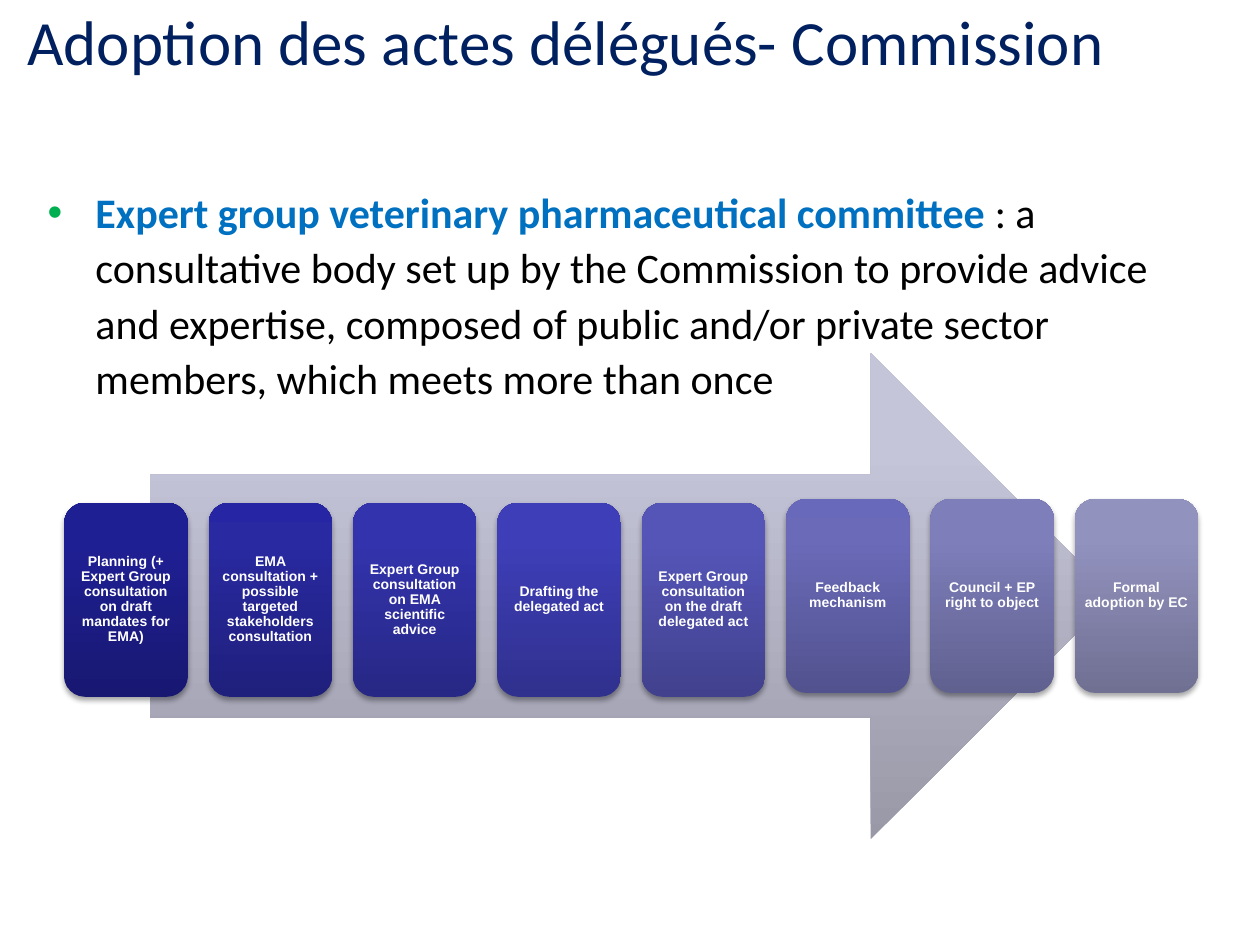
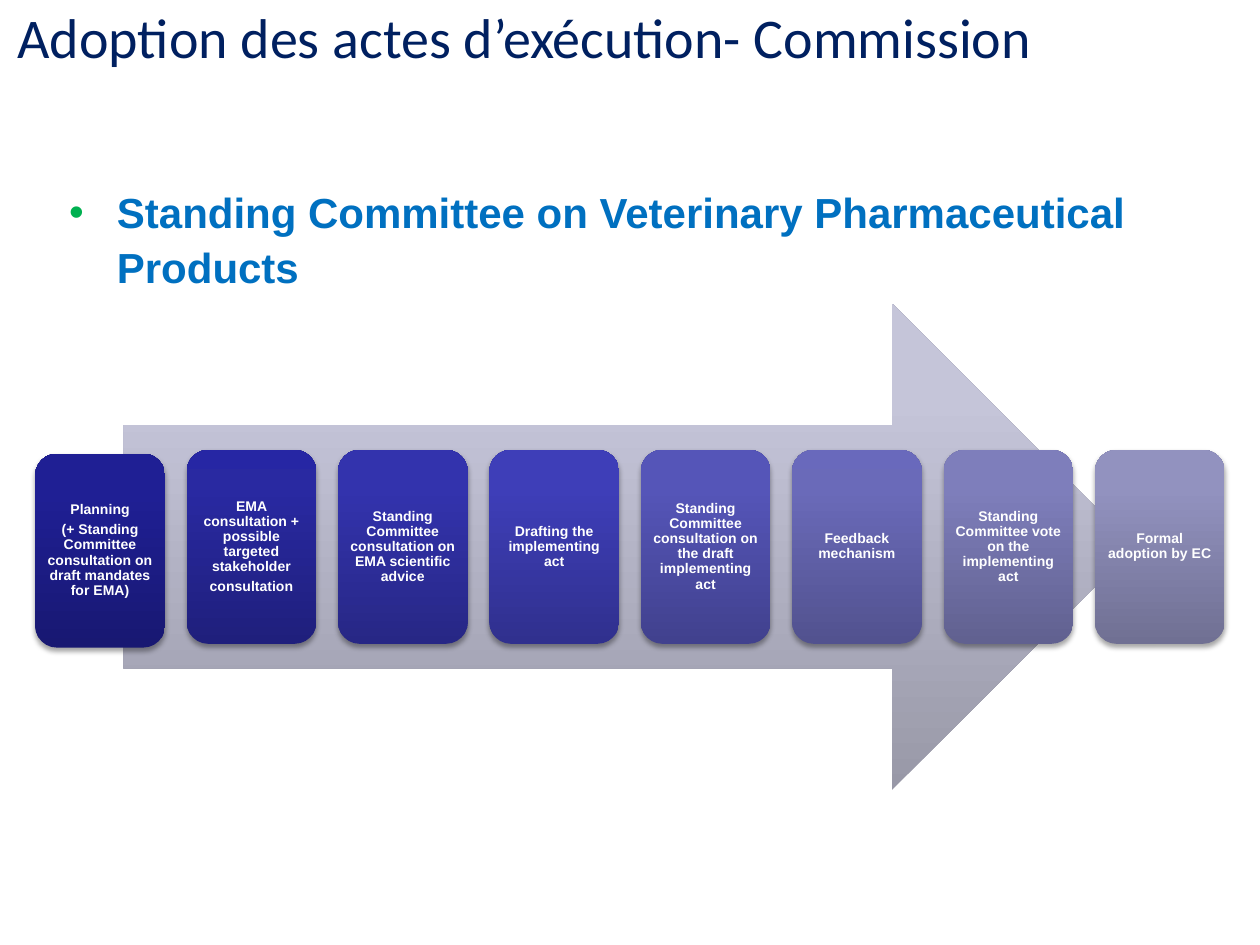
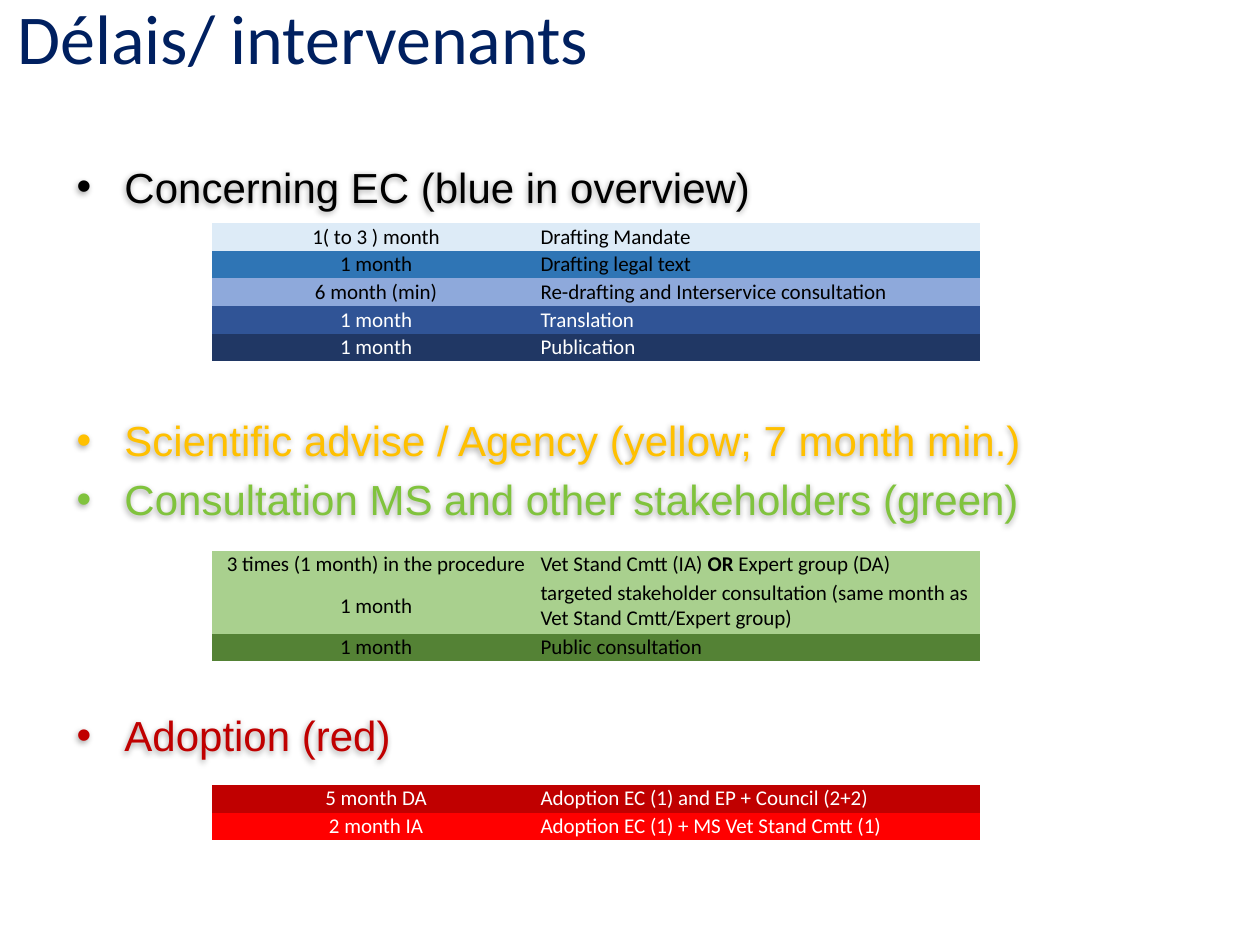
import copy
from dataclasses import dataclass

import pptx
import pptx.util
from pptx.dml.color import RGBColor
from pptx.enum.shapes import MSO_SHAPE
from pptx.enum.text import MSO_ANCHOR, PP_ALIGN
from pptx.oxml import parse_xml
from pptx.oxml.ns import nsdecls, qn
from pptx.util import Inches


# Colours, fonts and type sizes shared by the slides
@dataclass(frozen=True)
class Theme:
    heading_font: str = "Calibri"
    label_font: str = "Arial"
    title: str = "002060"
    highlight: str = "0070C0"
    bullet: str = "00B050"
    black: str = "000000"
    white: str = "FFFFFF"
    body_size: int = 24
    step_size: int = 8
    table_size: int = 12
    stops: tuple = (0, 0.8, 1)
    arrow: tuple = ("9898A7", "C5C5D9", "C6C6DA")
    steps: tuple = (
        ("181872", "1F1F94", "1D1D97"),
        ("1F1F7C", "2929A1", "2626A4"),
        ("272785", "3333AD", "3131B0"),
        ("30308E", "3E3EB8", "3C3CBB"),
        ("41418E", "5555B8", "5353BB"),
        ("52528F", "6A6AB9", "6969BC"),
        ("616190", "7E7EBB", "7E7EBD"),
        ("707093", "9292BF", "9191C0"),
    )


class Deck:
    NO_TABLE_STYLE = "{2D5ABB26-0587-4C30-8999-92F81FD0307C}"

    def __init__(self, theme):
        self.theme = theme
        self.presentation = pptx.Presentation()
        self.presentation.slide_width = Inches(10)
        self.presentation.slide_height = Inches(7.5)
        self.slide = None

    # Shared formatting
    def add_text(self, paragraph, text, font, size, colour, bold=False):
        run = paragraph.add_run()
        run.text = text
        run.font.name = font
        run.font.size = pptx.util.Pt(size)
        run.font.bold = bold
        run.font.color.rgb = RGBColor.from_string(colour)

    def add_shadow(self, shape):
        shape.shadow.inherit = False
        effects = shape._element.spPr.find(qn("a:effectLst"))
        effects.append(parse_xml(
            f'<a:outerShdw {nsdecls("a")} blurRad="{pptx.util.Pt(3.1)}" '
            f'dist="{pptx.util.Pt(1.8)}" dir="5400000" rotWithShape="0">'
            f'<a:srgbClr val="{self.theme.black}"><a:alpha val="35000"/></a:srgbClr>'
            "</a:outerShdw>"))

    def add_bullet(self, paragraph, colour):
        properties = paragraph._p.get_or_add_pPr()
        properties.set("marL", str(Inches(0.38)))
        properties.set("indent", str(-Inches(0.38)))
        for element in (f'<a:buClr {nsdecls("a")}><a:srgbClr val="{colour}"/></a:buClr>',
                        f'<a:buFont {nsdecls("a")} typeface="{self.theme.label_font}"/>',
                        f'<a:buChar {nsdecls("a")} char="•"/>'):
            properties.append(parse_xml(element))

    # Slide elements
    def new_slide(self, title, left, top, size):
        self.slide = self.presentation.slides.add_slide(self.presentation.slide_layouts[6])
        frame = self.text_box(left, top, 9, 1.02).text_frame
        self.add_text(frame.paragraphs[0], title, self.theme.heading_font, size,
                      self.theme.title)

    def text_box(self, left, top, width, height):
        box = self.slide.shapes.add_textbox(
            Inches(left), Inches(top), Inches(width), Inches(height))
        box.text_frame.word_wrap = True
        return box

    def definition(self, left, height, font, term, meaning=""):
        """A bulleted term in bold, followed by its meaning."""
        paragraph = self.text_box(left, 1.39, 9.3, height).text_frame.paragraphs[0]
        self.add_bullet(paragraph, self.theme.bullet)
        paragraph.line_spacing = 1.1
        self.add_text(paragraph, term, font, self.theme.body_size, self.theme.highlight, True)
        if meaning:
            self.add_text(paragraph, meaning, font, self.theme.body_size, self.theme.black)

    def gradient_shape(self, preset, left, top, width, height, colours):
        shape = self.slide.shapes.add_shape(
            preset, Inches(left), Inches(top), Inches(width), Inches(height))
        shape.shadow.inherit = False
        shape.line.fill.background()
        shape.fill.gradient()
        shape.fill.gradient_angle = 90
        stop_list = shape._element.spPr.find(qn("a:gradFill")).find(qn("a:gsLst"))
        stop_list.append(copy.deepcopy(stop_list[-1]))
        for stop, position, colour in zip(shape.fill.gradient_stops, self.theme.stops, colours):
            stop.position = position
            stop.color.rgb = RGBColor.from_string(colour)
        return shape

    def step(self, left, top, width, text, colours):
        shape = self.gradient_shape(
            MSO_SHAPE.ROUNDED_RECTANGLE, left, top, width, 1.54, colours)
        self.add_shadow(shape)
        frame = shape.text_frame
        frame.word_wrap = True
        frame.vertical_anchor = MSO_ANCHOR.MIDDLE
        frame.margin_left = frame.margin_right = Inches(0.03)
        frame.margin_top = frame.margin_bottom = Inches(0.03)
        frame.text = text
        for paragraph in frame.paragraphs:
            paragraph.alignment = PP_ALIGN.CENTER
            paragraph.line_spacing = 0.9
            paragraph.space_after = pptx.util.Pt(2.8)
            for run in paragraph.runs:
                run.font.name = self.theme.label_font
                run.font.size = pptx.util.Pt(self.theme.step_size)
                run.font.bold = True
                run.font.color.rgb = RGBColor.from_string(self.theme.white)

    def process(self, arrow, first, last, top, width, lowered, steps):
        """Evenly spaced steps over an arrow; the first few sit slightly lower."""
        self.gradient_shape(MSO_SHAPE.RIGHT_ARROW, *arrow, self.theme.arrow)
        pitch = (last - first) / (len(steps) - 1)
        for index, (text, colours) in enumerate(zip(steps, self.theme.steps)):
            drop = 0.03 if index < lowered else 0
            self.step(first + index * pitch, top + drop, width, text, colours)

    def headings(self, entries):
        box = self.text_box(0.51, 1.23, 9, 4.65)
        self.add_shadow(box)
        frame = box.text_frame
        for index, (text, colour, space_before) in enumerate(entries):
            paragraph = frame.add_paragraph() if index else frame.paragraphs[0]
            self.add_bullet(paragraph, colour)
            paragraph.line_spacing = pptx.util.Pt(28.8)
            paragraph.space_before = pptx.util.Pt(space_before)
            self.add_text(paragraph, text, self.theme.label_font, self.theme.body_size, colour)

    def schedule(self, top, rows):
        """Rows of duration, activity runs, fill, text colour and height."""
        frame = self.slide.shapes.add_table(
            len(rows), 2, Inches(1.68), Inches(top), Inches(6.1),
            Inches(sum(row[-1] for row in rows)))
        table = frame.table
        table.first_row = table.horz_banding = False
        table._tbl.tblPr.find(qn("a:tableStyleId")).text = self.NO_TABLE_STYLE
        table.columns[0].width, table.columns[1].width = Inches(2.61), Inches(3.49)
        for index, (duration, activity, fill, colour, height) in enumerate(rows):
            table.rows[index].height = Inches(height)
            for column, runs in enumerate(([duration], activity)):
                cell = table.cell(index, column)
                cell.fill.solid()
                cell.fill.fore_color.rgb = RGBColor.from_string(fill)
                cell.vertical_anchor = MSO_ANCHOR.MIDDLE
                cell.margin_left = cell.margin_right = 0
                cell.margin_top = cell.margin_bottom = 0
                paragraph = cell.text_frame.paragraphs[0]
                paragraph.alignment = PP_ALIGN.LEFT if column else PP_ALIGN.CENTER
                for text in runs:
                    self.add_text(paragraph, text, self.theme.heading_font,
                                  self.theme.table_size, colour, text == "OR")


def main():
    theme = Theme()
    deck = Deck(theme)

    # Delegated acts
    deck.new_slide("Adoption des actes délégués- Commission", 0.12, -0.03, 36)
    deck.process((1.19, 2.8, 7.65, 3.86), 0.51, 8.53, 3.96, 0.98, 5, [
        "Planning (+ Expert Group consultation on draft mandates for EMA)",
        "EMA consultation + possible targeted stakeholders consultation",
        "Expert Group consultation on EMA scientific advice",
        "Drafting the delegated act",
        "Expert Group consultation on the draft delegated act",
        "Feedback mechanism",
        "Council + EP right to object",
        "Formal adoption by EC",
    ])
    deck.definition(
        0.28, 2.99, theme.heading_font, "Expert group veterinary pharmaceutical committee ",
        ": a consultative body set up by the Commission to provide advice and expertise, "
        "composed of public and/or private sector members, which meets more than once")

    # Implementing acts
    deck.new_slide("Adoption des actes d’exécution- Commission", 0.04, -0.03, 32)
    deck.process((0.98, 2.41, 8.03, 3.86), 0.28, 8.69, 3.57, 1.03, 1, [
        "Planning\n(+ Standing Committee consultation on draft mandates for EMA)",
        "EMA consultation + possible targeted stakeholder\nconsultation",
        "Standing Committee consultation on EMA scientific advice",
        "Drafting the implementing act",
        "Standing Committee consultation on the draft implementing act",
        "Feedback mechanism",
        "Standing Committee vote on the implementing act",
        "Formal adoption by EC",
    ])
    deck.definition(0.45, 1.18, theme.label_font,
                    "Standing Committee on Veterinary Pharmaceutical Products")

    # Time limits and parties involved
    deck.new_slide("Délais/ intervenants", 0.04, -0.09, 40)
    deck.headings([
        ("Concerning EC (blue in overview)", theme.black, 0),
        ("Scientific advise / Agency (yellow; 7 month min.)", "FFC000", 116),
        ("Consultation MS and other stakeholders (green)", "80C33D", 5),
        ("Adoption (red)", "C00000", 106),
    ])
    deck.schedule(1.77, [
        ("1( to 3 ) month", ["Drafting Mandate"], "DDEBF7", theme.black, 0.22),
        ("1 month", ["Drafting legal text"], "2F75B5", theme.black, 0.22),
        ("6 month (min)", ["Re-drafting and Interservice consultation"],
         "8EA9DB", theme.black, 0.22),
        ("1 month", ["Translation"], "305496", theme.white, 0.22),
        ("1 month", ["Publication"], "203764", theme.white, 0.22),
    ])
    deck.schedule(4.37, [
        ("3 times (1 month) in the procedure",
         ["Vet Stand Cmtt (IA) ", "OR", " Expert group (DA)"], "A9D08E", theme.black, 0.22),
        ("1 month",
         ["targeted stakeholder consultation (same month as Vet Stand Cmtt/Expert group)"],
         "A9D08E", theme.black, 0.44),
        ("1 month", ["Public consultation"], "548235", theme.black, 0.22),
    ])
    deck.schedule(6.23, [
        ("5 month DA", ["Adoption EC (1) and EP + Council (2+2)"],
         "C00000", theme.white, 0.22),
        ("2 month IA", ["Adoption EC (1) + MS Vet Stand Cmtt (1)"],
         "FF0000", theme.white, 0.22),
    ])

    deck.presentation.save("out.pptx")


if __name__ == "__main__":
    main()
